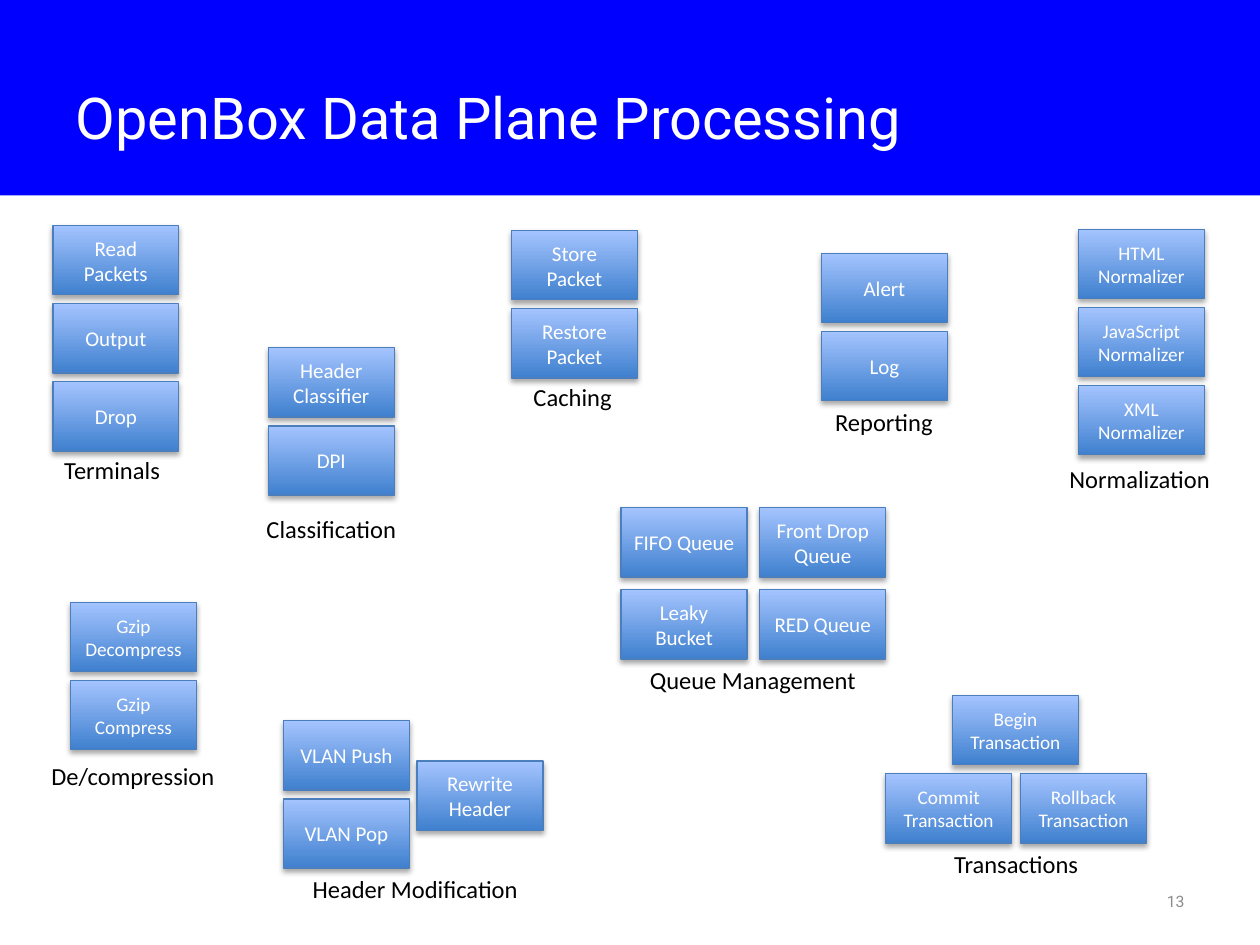
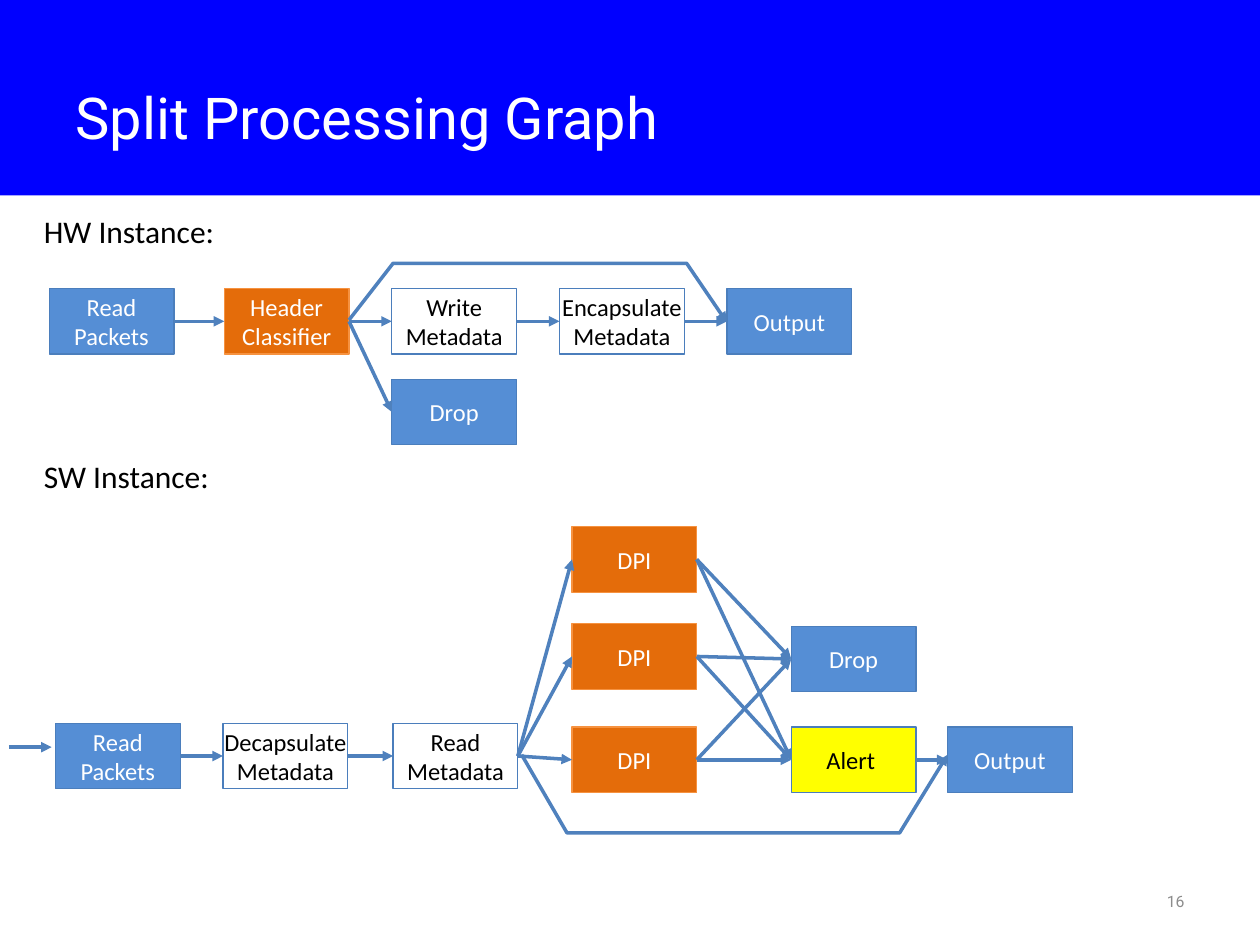
from lxml.etree import SubElement
from pptx import Presentation
from pptx.dml.color import RGBColor
from pptx.enum.shapes import MSO_CONNECTOR as Connector, MSO_SHAPE as Shape
from pptx.enum.text import MSO_ANCHOR as Anchor, MSO_AUTO_SIZE as AutoSize, PP_ALIGN as Align
from pptx.oxml.ns import qn
from pptx.util import Emu, Pt

PX = 9144  # 100 px to the inch
COLORS = {
    "band": "0000FF", "white": "FFFFFF", "black": "000000", "number": "8C8C8C",
    "blue": "558ED5", "orange": "E46C0A", "yellow": "FFFF00",
    "edge": "4B7EBC", "orange_edge": "F69240", "arrow": "4F81BD",
    "block_bottom": "3F80CE", "block_top": "A4C4FF",
}
BODY_FONT, HEAD_FONT = "Calibri", "Roboto"
TITLE_ONLY = 5
LEFT_SITE, RIGHT_SITE = 1, 3


def px(*lengths):
    return [Emu(length * PX) for length in lengths]


def rgb(name):
    return RGBColor.from_string(COLORS[name])


class Painter:
    def __init__(self, deck):
        self.deck = deck
        self.page = self.canvas = None

    def new_page(self, title, number):
        self.page = self.deck.slides.add_slide(self.deck.slide_layouts[TITLE_ONLY])
        self.canvas = self.page.shapes
        heading = self.page.shapes.title
        heading.left, heading.top, heading.width, heading.height = px(50, 30, 900, 125)
        self.fill_text(heading, title, 33, "white", Align.LEFT, font=HEAD_FONT)
        band = self.rect((0, 0, 1000, 155), "band")
        heading.element.addprevious(band.element)
        self.label((717, 695, 233, 40), number, 9, "number", Align.RIGHT,
                   Anchor.MIDDLE, HEAD_FONT, wrap=True)

    def start_group(self):
        self.canvas = self.page.shapes.add_group_shape().shapes

    def fill_text(self, box, text, size, color, align=Align.CENTER,
                  anchor=Anchor.MIDDLE, font=BODY_FONT, wrap=True):
        frame = box.text_frame
        frame.word_wrap = wrap
        frame.auto_size = AutoSize.NONE
        frame.vertical_anchor = anchor
        para = frame.paragraphs[0]
        para.alignment = align
        for index, line in enumerate(text.split("\n")):
            if index:
                para.add_line_break()
            span = para.add_run()
            span.text = line
            span.font.name, span.font.size = font, Pt(size)
            span.font.color.rgb = rgb(color)

    def label(self, area, text, size, color="black", align=Align.LEFT,
              anchor=Anchor.TOP, font=BODY_FONT, wrap=False):
        box = self.canvas.add_textbox(*px(*area))
        self.fill_text(box, text, size, color, align, anchor, font, wrap)

    def rect(self, area, fill, edge=None):
        box = self.canvas.add_shape(Shape.RECTANGLE, *px(*area))
        box.shadow.inherit = False
        box.fill.solid()
        box.fill.fore_color.rgb = rgb(fill)
        if edge:
            box.line.color.rgb = rgb(edge)
            box.line.width = Pt(0.75)
        else:
            box.line.fill.background()
        return box

    def block(self, left, top, text, size):
        """Draw a shaded processing block with a soft shadow."""
        box = self.rect((left, top, 100, 55), "blue", "edge")
        box.fill.gradient()
        box.fill.gradient_angle = 90
        for stop, name in zip(box.fill.gradient_stops, ("block_bottom", "block_top")):
            stop.color.rgb = rgb(name)
        effects = box.element.spPr.find(qn("a:effectLst"))
        shadow = SubElement(effects, qn("a:outerShdw"), blurRad="40000", dist="23000",
                            dir="5400000", rotWithShape="0")
        shade = SubElement(shadow, qn("a:srgbClr"), val=COLORS["black"])
        SubElement(shade, qn("a:alpha"), val="35000")
        self.fill_text(box, text, size, "white")

    def node(self, left, top, text, fill="blue"):
        """Draw a flat step of a processing graph."""
        box = self.rect((left, top, 99, 52), fill,
                        "orange_edge" if fill == "orange" else "edge")
        self.fill_text(box, text, 14, "black" if fill in ("white", "yellow") else "white")
        if "\n" in text:
            box.text_frame.margin_left = box.text_frame.margin_right = 0
        return box

    def style_arrow(self, arrow):
        arrow.line.color.rgb = rgb("arrow")
        arrow.line.width = Pt(2)
        outline = arrow.element.spPr.find(qn("a:ln"))
        SubElement(outline, qn("a:tailEnd"), type="triangle")

    def arrow(self, start=(0, 0), end=(0, 0)):
        line = self.canvas.add_connector(Connector.STRAIGHT, *px(*start, *end))
        self.style_arrow(line)
        SubElement(line.element.spPr, qn("a:effectLst"))
        return line

    def link(self, source, target):
        line = self.arrow()
        line.begin_connect(source, RIGHT_SITE)
        line.end_connect(target, LEFT_SITE)

    def detour(self, start, *points):
        """Draw an arrow that bends around the steps it skips."""
        builder = self.canvas.build_freeform(*px(*start))
        builder.add_line_segments([px(*point) for point in points], close=False)
        route = builder.convert_to_shape()
        route.shadow.inherit = False
        route.fill.background()
        self.style_arrow(route)


# Category, label (left, top, width), text size, row pitch, columns (left, top, blocks)
CATEGORIES = [
    ("Terminals", (40, 356, 98), 12, 62, [(42, 179, ["Read Packets", "Output", "Drop"])]),
    ("Classification", (201, 403, 124), 12, 62, [(213, 276, ["Header Classifier", "DPI"])]),
    ("Header Modification", (237, 689, 185), 12, 62,
     [(225, 572, ["VLAN Push", "VLAN Pop"]), (331, 604, ["Rewrite Header"])]),
    ("Transactions", (746, 669, 121), 11, 62,
     [(756, 552, ["Begin Transaction"]), (703, 614, ["Commit Transaction"]),
      (810, 614, ["Rollback Transaction"])]),
    ("De/compression", (30, 599, 151), 11, 62,
     [(56, 478, ["Gzip Decompress", "Gzip Compress"])]),
    ("Normalization", (838, 363, 133), 11, 62,
     [(856, 182, ["HTML Normalizer", "JavaScript Normalizer", "XML Normalizer"])]),
    ("Caching", (413, 298, 83), 12, 62, [(406, 183, ["Store Packet", "Restore Packet"])]),
    ("Reporting", (652, 318, 99), 12, 62, [(652, 201, ["Alert", "Log"])]),
    ("Queue Management", (505, 523, 185), 12, 65,
     [(493, 403, ["FIFO Queue", "Leaky Bucket"]),
      (603, 403, ["Front Drop Queue", "RED Queue"])]),
]


def draw_block_catalogue(painter):
    painter.new_page("OpenBox Data Plane Processing", "13")
    for name, label_place, size, pitch, columns in CATEGORIES:
        painter.start_group()
        for left, top, blocks in columns:
            for row, text in enumerate(blocks):
                painter.block(left, top + row * pitch, text, size)
        painter.label((*label_place, 34), name, 14, align=Align.CENTER)


def draw_hardware_graph(painter):
    painter.label((25, 163, 166, 56), "HW Instance:", 18)
    row = 229
    reader = painter.node(39, row, "Read Packets")
    classifier = painter.node(178, row, "Header Classifier", "orange")
    tagger = painter.node(311, row, "Write\nMetadata", "white")
    encapsulator = painter.node(444, row, "Encapsulate\nMetadata", "white")
    output = painter.node(577, row, "Output")
    drop = painter.node(311, 301, "Drop")
    chain = [reader, classifier, tagger, encapsulator, output]
    for source, target in [*zip(chain, chain[1:]), (classifier, drop)]:
        painter.link(source, target)
    painter.detour((277, 254), (312, 209), (545, 209), (577, 256))


def draw_software_graph(painter):
    painter.label((25, 358, 166, 56), "SW Instance:", 18)
    row, end_row = 574, 577
    reader = painter.node(44, row, "Read Packets")
    decapsulator = painter.node(177, row, "Decapsulate\nMetadata", "white")
    metadata = painter.node(312, row, "Read\nMetadata", "white")
    inspectors = [painter.node(454, top, "DPI", "orange") for top in (418, 495, end_row)]
    drop = painter.node(628, 497, "Drop")
    alert = painter.node(628, end_row, "Alert ", "yellow")
    output = painter.node(752, end_row, "Output")
    painter.arrow((7, 593), (41, 593))
    for source, target in [(reader, decapsulator), (decapsulator, metadata), (alert, output)]:
        painter.link(source, target)
    for inspector in inspectors:
        painter.link(metadata, inspector)
        painter.link(inspector, drop)
        painter.link(inspector, alert)
    painter.detour((414, 599), (450, 661), (714, 661), (752, 599))


def main():
    deck = Presentation()
    deck.slide_width, deck.slide_height = px(1000, 750)
    painter = Painter(deck)
    draw_block_catalogue(painter)
    painter.new_page("Split Processing Graph", "16")
    draw_hardware_graph(painter)
    draw_software_graph(painter)
    deck.save("out.pptx")


if __name__ == "__main__":
    main()
